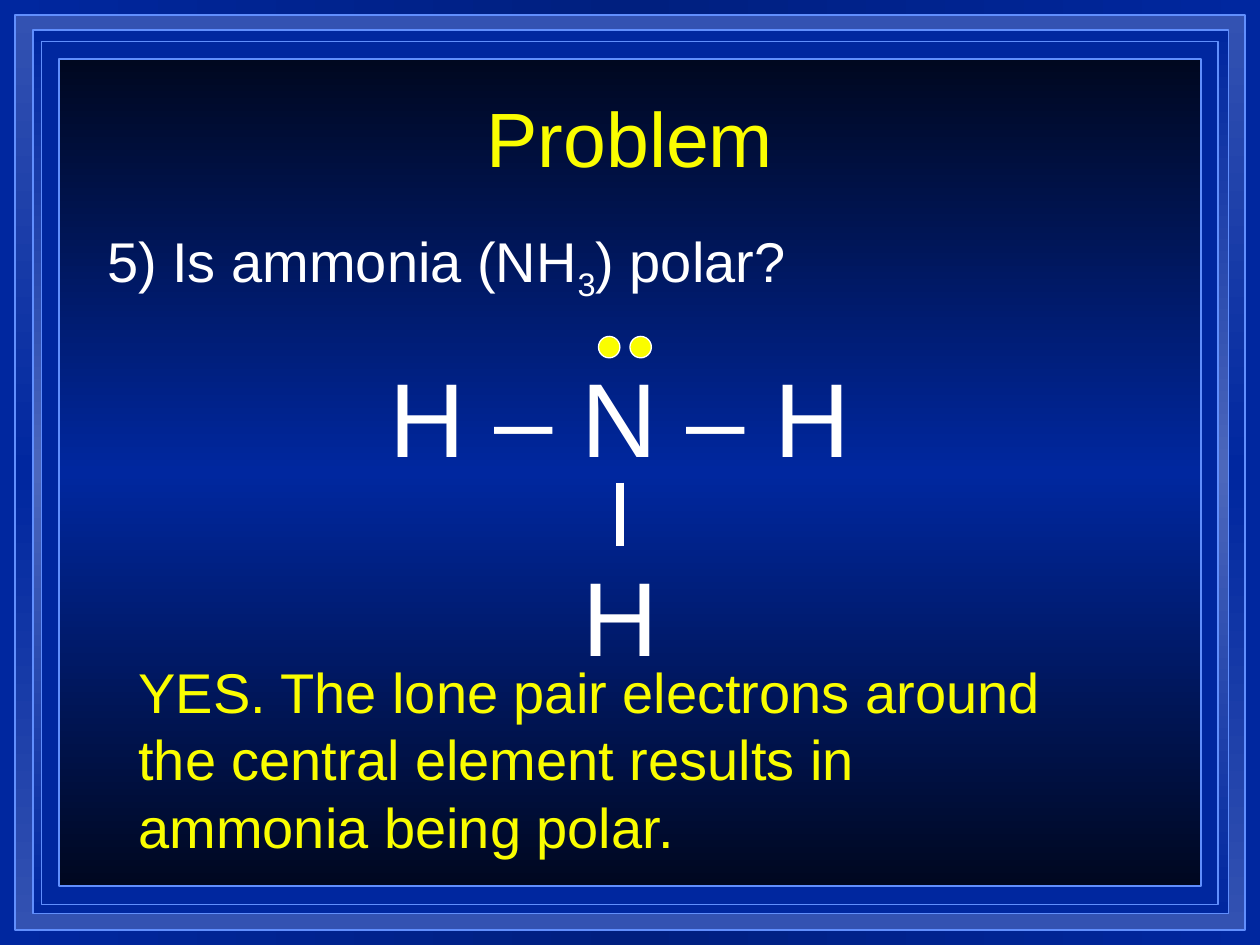
from lxml import etree
from pptx import Presentation
from pptx import util as u
from pptx.dml.color import RGBColor
from pptx.enum import shapes, text
from pptx.oxml.ns import qn

BLUE = RGBColor(0x00, 0x27, 0x9F)
DEEP_BLUE = RGBColor(0x00, 0x1F, 0x7F)
STEEL = RGBColor(0x33, 0x52, 0xB2)
PALE_STEEL = RGBColor(0x4C, 0x67, 0xBC)
NIGHT = RGBColor(0x00, 0x08, 0x20)
EDGE = RGBColor(0x61, 0x8F, 0xFD)
YELLOW = RGBColor(0xFA, 0xFD, 0x00)
WHITE = RGBColor(0xFF, 0xFF, 0xFF)

FONT = "Arial"
BOND_X = 4.92  # axis through the central atom

# Nested border frames: left, top, width, height, edge colour, middle colour
FRAMES = [
    (0.12, 0.12, 9.76, 7.26, STEEL, BLUE),
    (0.26, 0.24, 9.49, 7.01, BLUE, PALE_STEEL),
    (0.33, 0.33, 9.34, 6.85, BLUE, BLUE),
    (0.47, 0.47, 9.06, 6.56, NIGHT, BLUE),
]


def inches(*lengths):
    return [u.Inches(length) for length in lengths]


def mirror_gradient(fill, holder, outer, middle, angle):
    """Fill with a gradient running outer - middle - outer."""
    fill.gradient()
    fill.gradient_angle = angle
    stops = next(holder.iter(qn("a:gsLst")))
    for stop in list(stops):
        stops.remove(stop)
    for position, color in ((0, outer), (50000, middle), (100000, outer)):
        stop = etree.SubElement(stops, qn("a:gs"), pos=str(position))
        etree.SubElement(stop, qn("a:srgbClr"), val=str(color))


def add_outlined(slide, kind, place, line_color, line_width):
    shape = slide.shapes.add_shape(kind, *inches(*place))
    shape.shadow.inherit = False
    shape.line.color.rgb = line_color
    shape.line.width = u.Pt(line_width)
    return shape


def add_frame(slide, place, outer, middle):
    frame = add_outlined(slide, shapes.MSO_SHAPE.RECTANGLE, place, EDGE, 1)
    if outer == middle:
        frame.fill.solid()
        frame.fill.fore_color.rgb = outer
    else:
        mirror_gradient(frame.fill, frame.element, outer, middle, 270)
    # Frames lie behind the title and body
    slide.shapes.title.element.addprevious(frame.element)


def add_electron(slide, left):
    place = (left, 2.67, 0.17, 0.17)
    dot = add_outlined(slide, shapes.MSO_SHAPE.OVAL, place, WHITE, 0.75)
    dot.fill.solid()
    dot.fill.fore_color.rgb = YELLOW


def add_bond(slide, top, bottom):
    bond = slide.shapes.add_connector(
        shapes.MSO_CONNECTOR.STRAIGHT, *inches(BOND_X, top, BOND_X, bottom))
    bond.line.color.rgb = WHITE
    bond.line.width = u.Pt(4.5)
    etree.SubElement(bond.element.spPr, qn("a:effectLst"))


def write(box, words, size, color, align=text.PP_ALIGN.LEFT,
          anchor=text.MSO_ANCHOR.TOP):
    """Set one paragraph; words is a list of (text, is_subscript)."""
    frame = box.text_frame
    frame.word_wrap = True
    frame.auto_size = text.MSO_AUTO_SIZE.NONE
    frame.vertical_anchor = anchor
    para = frame.paragraphs[0]
    para.alignment = align
    para.space_before = u.Pt(0)
    para.font.name = FONT
    para.font.size = u.Pt(size)
    para.font.color.rgb = color
    for content, is_subscript in words:
        span = para.add_run()
        span.text = content
        if is_subscript:
            span.font._element.set("baseline", "-25000")
    return para


def place_holder(box, left, top, width, height):
    box.left, box.top, box.width, box.height = inches(left, top, width, height)
    return box


def add_text(slide, place, content, size, color, **layout):
    box = slide.shapes.add_textbox(*inches(*place))
    write(box, [(content, False)], size, color, **layout)


def main():
    deck = Presentation()
    deck.slide_width, deck.slide_height = inches(10, 7.5)
    slide = deck.slides.add_slide(deck.slide_layouts[1])
    centre = text.PP_ALIGN.CENTER

    # Background and border
    background = slide.background.fill
    background.gradient()
    mirror_gradient(background, slide.element, BLUE, DEEP_BLUE, 0)
    for *place, outer, middle in FRAMES:
        add_frame(slide, place, outer, middle)

    # Title and question
    title = place_holder(slide.shapes.title, 0.75, 0.67, 8.5, 0.83)
    write(title, [("Problem", False)], 44, YELLOW, centre,
          text.MSO_ANCHOR.MIDDLE)
    body = place_holder(slide.placeholders[1], 0.75, 1.75, 8.42, 1.58)
    question = write(body, [("5) Is ammonia (NH", False), ("3", True),
                            (") polar?", False)], 32, WHITE)
    properties = question._p.get_or_add_pPr()
    properties.set("marL", str(u.Inches(0.38)))
    properties.set("indent", str(u.Inches(-0.38)))
    bullet = etree.Element(qn("a:buNone"))
    properties.find(qn("a:defRPr")).addprevious(bullet)

    # Answer
    add_text(slide, (1, 5.17, 7.58, 1.7),
             "YES. The lone pair electrons around the central element "
             "results in ammonia being polar.", 32, YELLOW)

    # Ammonia structure with its lone pair
    add_text(slide, (2.42, 2.75, 5, 1.1), "H – N – H", 60, WHITE, align=centre)
    for left in (4.75, 5):
        add_electron(slide, left)
    add_bond(slide, 3.83, 4.33)
    add_text(slide, (BOND_X - 0.62, 4.17, 1.25, 1.26), "H", 60, WHITE,
             align=centre, anchor=text.MSO_ANCHOR.BOTTOM)

    deck.save("out.pptx")


if __name__ == "__main__":
    main()
